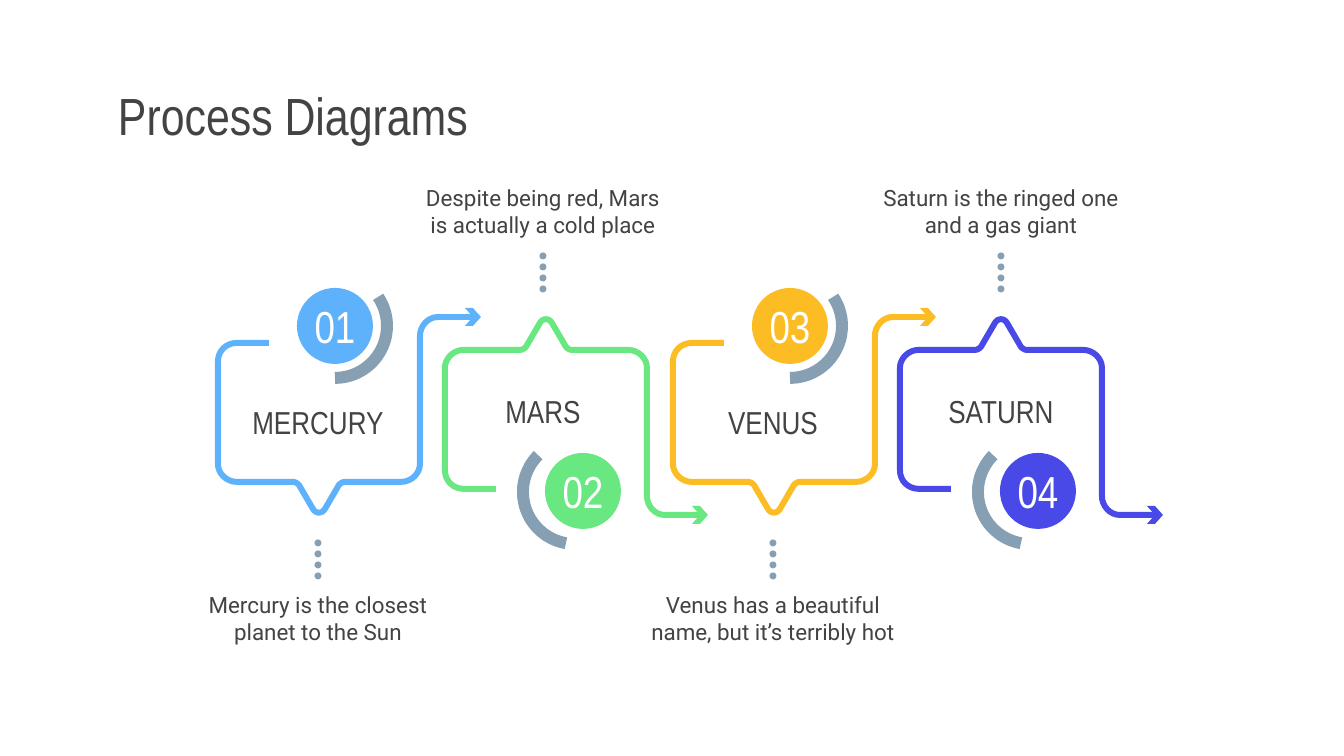
from math import cos, radians, sin

from pptx import Presentation
from pptx.dml.color import RGBColor
from pptx.enum.shapes import MSO_SHAPE as Shape
from pptx.enum.text import MSO_ANCHOR as Anchor, PP_ALIGN as Align
from pptx.util import Pt

PX = 914400 / 134.4
COLORS = {"text": "434343", "white": "FFFFFF", "gray": "869FB2", "blue": "5EB2FC",
          "green": "69E781", "yellow": "FCBD24", "indigo": "4949E7"}
HEAD_FONT, BODY_FONT = "Arial Narrow", "Roboto"
MIRROR = 832  # top and bottom of a step swap as y -> MIRROR - y

# Outlines of a step that points down, x measured from its left edge.
# Two numbers are a corner; six are a cubic curve (two controls, end).
TRACK = [(51, 343), (19, 343), (8, 343, 0, 351, 0, 362), (0, 464),
         (0, 473, 8, 482, 19, 482), (75, 482), (77, 482, 79, 483, 81, 485),
         (95, 509), (98, 514, 104, 514, 107, 509), (121, 485),
         (123, 483, 125, 482, 127, 482), (183, 482),
         (194, 482, 202, 473, 202, 464), (202, 336)]
HOOK = [(255, 317), (220, 317), (210, 317, 202, 326, 202, 336)]
ARROWHEAD = [(247, 308), (255, 317), (247, 326), (255, 326), (263, 317), (255, 308)]

# Badge centre and arc centre are (x from left edge, y); arc angles in degrees.
DOWN = {"badge": (117, 326), "arc": (117, 326), "angles": (-34, 90),
        "dots": 540, "label": 392, "caption": 576}
UP = {"badge": (138, 491), "arc": (130, 492), "angles": (100, 225),
      "dots": 253, "label": 381, "caption": 169}

# number, name, caption, colour, left edge, text axis, layout
STEPS = [
    ("01", "MERCURY", "Mercury is the closest planet to the Sun", "blue", 218, 318, DOWN),
    ("02", "MARS", "Despite being red, Mars is actually a cold place", "green", 445, 543, UP),
    ("03", "VENUS", "Venus has a beautiful name, but it’s terribly hot", "yellow", 673, 773, DOWN),
    ("04", "SATURN", "Saturn is the ringed one and a gas giant", "indigo", 900, 1001, UP),
]


def px(n):
    return round(n * PX)


def rgb(name):
    return RGBColor.from_string(COLORS[name])


def write(sp, text, size, font, color="text", align=Align.CENTER, margin=13):
    tf = sp.text_frame
    tf.word_wrap = True
    tf.vertical_anchor = Anchor.MIDDLE
    tf.margin_left = tf.margin_right = tf.margin_top = tf.margin_bottom = px(margin)
    p = tf.paragraphs[0]
    p.text = text
    p.alignment = align
    p.font.size, p.font.name = Pt(size), font
    p.font.color.rgb = rgb(color)


def add_text(shapes, x, y, w, h, text, size, font):
    write(shapes.add_textbox(px(x), px(y), px(w), px(h)), text, size, font)


def fill_only(sp, color):
    sp.shadow.inherit = False
    sp.fill.solid()
    sp.fill.fore_color.rgb = rgb(color)
    sp.line.fill.background()


def add_disc(shapes, cx, cy, d, color):
    sp = shapes.add_shape(Shape.OVAL, px(cx - d / 2), px(cy - d / 2), px(d), px(d))
    fill_only(sp, color)
    return sp


def add_badge(shapes, cx, cy, number, color):
    sp = add_disc(shapes, cx, cy, 76, color)
    write(sp, number, 24, HEAD_FONT, "white", margin=0)


def flatten(outline, steps=8):
    """Turn corners and cubic curves into a plain list of points."""
    points = []
    for part in outline:
        if len(part) == 2:
            points.append(part)
            continue
        (x0, y0), (x1, y1, x2, y2, x3, y3) = points[-1], part
        for i in range(1, steps + 1):
            t = i / steps
            u = 1 - t
            a, b, c, d = u ** 3, 3 * u * u * t, 3 * u * t * t, t ** 3
            points.append((a * x0 + b * x1 + c * x2 + d * x3,
                           a * y0 + b * y1 + c * y2 + d * y3))
    return points


def arc_points(cx, cy, radius, start, end, steps=32):
    angles = [radians(start + (end - start) * i / steps) for i in range(steps + 1)]
    return [(cx + radius * cos(a), cy + radius * sin(a)) for a in angles]


def add_outline(shapes, points, close=False):
    points = [(px(x), px(y)) for x, y in points]
    builder = shapes.build_freeform(*points[0])
    builder.add_line_segments(points[1:], close=close)
    return builder.convert_to_shape()


def add_stroke(shapes, points, color, width):
    sp = add_outline(shapes, points)
    sp.shadow.inherit = False
    sp.fill.background()
    sp.line.color.rgb = rgb(color)
    sp.line.width = Pt(width)


def add_step(slide, number, name, caption, color, left, axis, layout):
    shapes = slide.shapes.add_group_shape().shapes

    def place(outline):
        return [(left + x, MIRROR - y if layout is UP else y)
                for x, y in flatten(outline)]

    x, y = layout["badge"]
    add_badge(shapes, left + x, y, number, color)
    x, y = layout["arc"]
    add_stroke(shapes, arc_points(left + x, y, 52, *layout["angles"]), "gray", 6.42)
    for outline in (HOOK, TRACK):
        add_stroke(shapes, place(outline), color, 3.21)
    fill_only(add_outline(shapes, place(ARROWHEAD), close=True), color)
    for i in range(4):
        add_disc(shapes, axis, layout["dots"] + 3 + 11 * i, 7, "gray")
    add_text(shapes, axis - 101, layout["label"], 202, 59, name, 17, HEAD_FONT)
    add_text(shapes, axis - 137, layout["caption"], 274, 85, caption, 12, BODY_FONT)


def add_title(slide, text):
    sp = slide.shapes.title
    sp.left, sp.top, sp.width, sp.height = px(105), px(79), px(1136), px(71)
    write(sp, text, 28, HEAD_FONT, align=Align.LEFT)


def main():
    prs = Presentation()
    prs.slide_width, prs.slide_height = px(1344), px(756)
    s = prs.slides.add_slide(prs.slide_layouts[5])
    add_title(s, "Process Diagrams")
    for step in STEPS:
        add_step(s, *step)
    prs.save("out.pptx")


if __name__ == "__main__":
    main()
